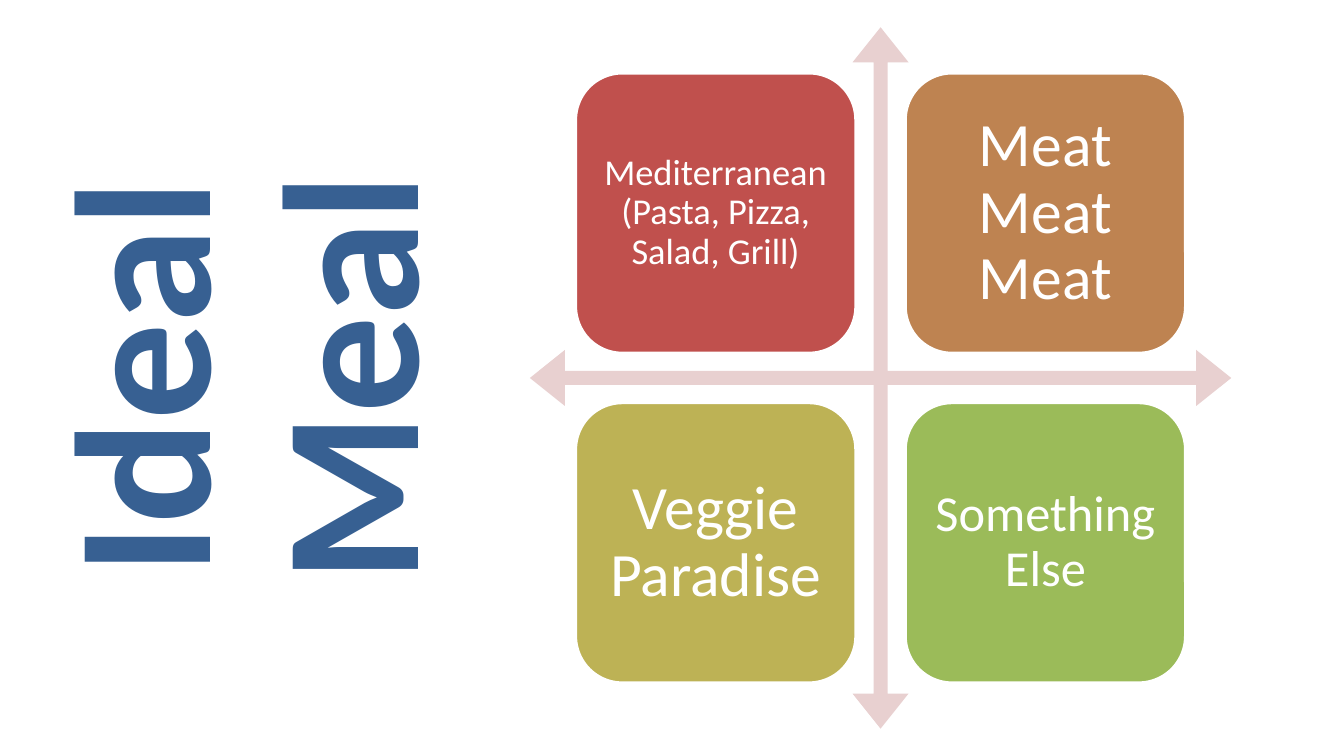
from pptx import Presentation
from pptx.dml.color import RGBColor
from pptx.enum.shapes import MSO_SHAPE
from pptx.enum.text import MSO_ANCHOR, PP_ALIGN
from pptx.util import Pt

QUAD_ARROW = MSO_SHAPE.QUAD_ARROW
ROUNDED = MSO_SHAPE.ROUNDED_RECTANGLE
MIDDLE = MSO_ANCHOR.MIDDLE
CENTER = PP_ALIGN.CENTER

FONT = "Calibri"
COLORS = {
    "white": "FFFFFF",
    "title": "376092",
    "axes": "E8D0D0",
    "red": "C0504D",
    "brown": "BE8351",
    "olive": "BDB255",
    "green": "9BBB59",
}

TITLE = "Ideal Meal"
# text, fill, font size, inset; row by row
MEALS = [
    ("Mediterranean\v(Pasta, Pizza, Salad, Grill)", "red", 26, 7.8),
    ("Meat Meat\vMeat", "brown", 44, 13.2),
    ("Veggie Paradise", "olive", 44, 13.2),
    ("Something Else", "green", 36, 10.8),
]

SLIDE_W, SLIDE_H = 960, 540
MATRIX_X, MATRIX_Y = 629, 270
AXES_SIZE = 501
AXES_ADJUSTMENTS = (0.02, 0.04, 0.05)
TILE = 200
PITCH = 235.5
TITLE_X, TITLE_W, TITLE_H = 181.5, 540, 308


def rgb(name):
    return RGBColor.from_string(COLORS[name])


def centered_box(x, y, width, height):
    """Left, top, width and height of a box around the point x, y."""
    return Pt(x - width / 2), Pt(y - height / 2), Pt(width), Pt(height)


def add_filled(slide, kind, box, color):
    shape = slide.shapes.add_shape(kind, *box)
    shape.shadow.inherit = False
    shape.fill.solid()
    shape.fill.fore_color.rgb = rgb(color)
    return shape


def write(frame, text, size, color, bold=False):
    frame.word_wrap = True
    frame.text = text
    for paragraph in frame.paragraphs:
        paragraph.alignment = CENTER
        paragraph.line_spacing = 0.9
        paragraph.font.name = FONT
        paragraph.font.size = Pt(size)
        paragraph.font.bold = bold
        paragraph.font.color.rgb = rgb(color)


def add_axes(slide):
    box = centered_box(MATRIX_X, MATRIX_Y, AXES_SIZE, AXES_SIZE)
    axes = add_filled(slide, QUAD_ARROW, box, "axes")
    axes.line.fill.background()
    for index, value in enumerate(AXES_ADJUSTMENTS):
        axes.adjustments[index] = value


def add_meal(slide, index, text, color, size, inset):
    row, column = divmod(index, 2)
    x = MATRIX_X + (column - 0.5) * PITCH
    y = MATRIX_Y + (row - 0.5) * PITCH
    tile = add_filled(slide, ROUNDED, centered_box(x, y, TILE, TILE), color)
    tile.line.color.rgb = rgb("white")
    tile.line.width = Pt(2)
    frame = tile.text_frame
    frame.margin_left = frame.margin_right = Pt(inset)
    frame.margin_top = frame.margin_bottom = Pt(inset)
    frame.vertical_anchor = MIDDLE
    write(frame, text, size, "white")


def add_title(slide):
    box = centered_box(TITLE_X, SLIDE_H / 2, TITLE_W, TITLE_H)
    title = slide.shapes.add_textbox(*box)
    title.rotation = 270
    write(title.text_frame, TITLE, 138, "title", bold=True)


def main():
    deck = Presentation()
    deck.slide_width, deck.slide_height = Pt(SLIDE_W), Pt(SLIDE_H)
    slide = deck.slides.add_slide(deck.slide_layouts[6])
    add_axes(slide)
    for index, meal in enumerate(MEALS):
        add_meal(slide, index, *meal)
    add_title(slide)
    deck.save("out.pptx")


if __name__ == "__main__":
    main()
